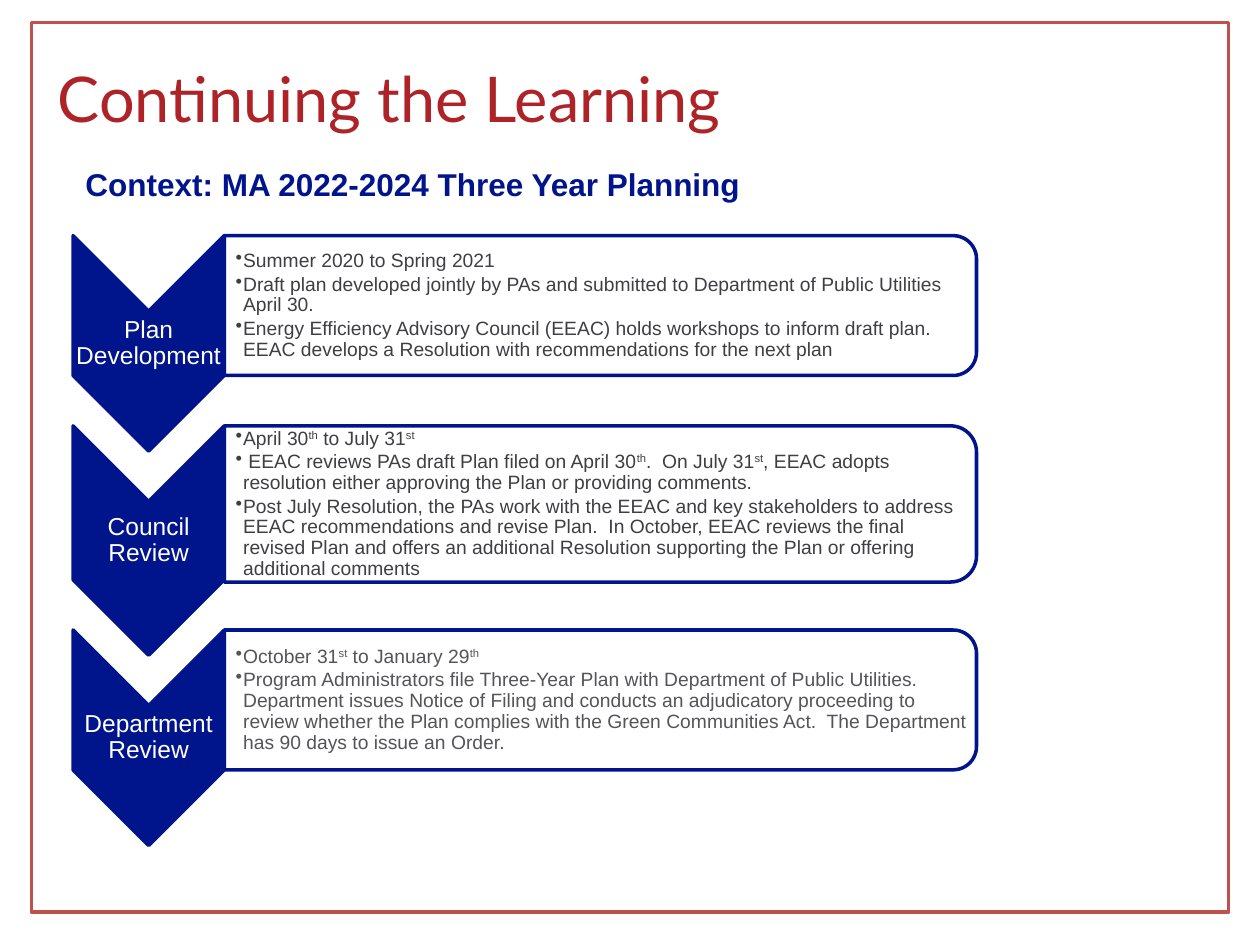
from dataclasses import dataclass

from lxml import etree
from pptx import Presentation
from pptx import util as u
from pptx.dml.color import RGBColor
from pptx.enum import shapes, text
from pptx.oxml import ns

Inches, Pt = u.Inches, u.Pt

NAVY = RGBColor(0x00, 0x14, 0x8C)
BRICK = RGBColor(0xC0, 0x50, 0x4D)
CRIMSON = RGBColor(0xAD, 0x23, 0x27)
WHITE = RGBColor(0xFF, 0xFF, 0xFF)
CHARCOAL = RGBColor(0x3F, 0x3F, 0x43)
GRAY = RGBColor(0x54, 0x54, 0x59)

ARROW_LEFT, ARROW_WIDTH = 0.58, 1.2
PANEL_LEFT, PANEL_WIDTH = 1.78, 5.97
PANEL_INSET = 0.055


@dataclass
class Stage:
    name: str
    top: float
    arrow_height: float
    panel_height: float
    color: RGBColor
    points: list[str]  # ^ marks the start and end of a superscript


STAGES = [
    Stage("Plan Development", 1.87, 1.71, 1.11, CHARCOAL, [
        "Summer 2020 to Spring 2021",
        "Draft plan developed jointly by PAs and submitted to Department of "
        "Public Utilities April 30.",
        "Energy Efficiency Advisory Council (EEAC) holds workshops to inform "
        "draft plan.  EEAC develops a Resolution with recommendations for the "
        "next plan",
    ]),
    Stage("Council Review", 3.38, 1.82, 1.24, CHARCOAL, [
        "April 30^th^ to July 31^st^",
        " EEAC reviews PAs draft Plan filed on April 30^th^.  On July 31^st^, "
        "EEAC adopts resolution either approving the Plan or providing comments.",
        "Post July Resolution, the PAs work with the EEAC and key stakeholders "
        "to address EEAC recommendations and revise Plan.  In October, EEAC "
        "reviews the final revised Plan and offers an additional Resolution "
        "supporting the Plan or offering additional comments",
    ]),
    Stage("Department Review", 5.0, 1.71, 1.11, GRAY, [
        "October 31^st^ to January 29^th^",
        "Program Administrators file Three-Year Plan with Department of Public "
        "Utilities.  Department issues Notice of Filing and conducts an "
        "adjudicatory proceeding to review whether the Plan complies with the "
        "Green Communities Act.  The Department has 90 days to issue an Order.",
    ]),
]


def apply_format(target, values: dict) -> None:
    for name, value in values.items():
        setattr(target, name, value)


def add_outline(slide, kind, left: float, top: float, width: float,
                height: float, fill: RGBColor, line: RGBColor):
    shape = slide.shapes.add_shape(
        kind, Inches(left), Inches(top), Inches(width), Inches(height))
    shape.shadow.inherit = False
    shape.fill.solid()
    shape.fill.fore_color.rgb = fill
    shape.line.color.rgb = line
    shape.line.width = Pt(2)
    return shape


def add_turned(slide, kind, left: float, top: float, width: float,
               height: float, fill: RGBColor):
    """Place a shape turned 90 degrees so that it covers the given area."""
    shift = (width - height) / 2
    shape = add_outline(slide, kind, left + shift, top - shift, height, width,
                        fill, NAVY)
    shape.rotation = 90
    return shape


def add_frame(slide, left: float, top: float, width: float, height: float,
              **values):
    box = slide.shapes.add_textbox(
        Inches(left), Inches(top), Inches(width), Inches(height))
    apply_format(box.text_frame, {"word_wrap": True, **values})
    return box.text_frame


def add_run(paragraph, words: str, size: int, color: RGBColor,
            face: str = "Arial", bold: bool = False):
    run = paragraph.add_run()
    run.text = words
    apply_format(run.font, {"size": Pt(size), "name": face, "bold": bold})
    run.font.color.rgb = color
    return run


def add_bullet(paragraph, color: RGBColor) -> None:
    props = paragraph._p.get_or_add_pPr()
    props.set("marL", str(Inches(0.06)))
    props.set("indent", str(Inches(-0.08)))
    tint = etree.SubElement(props, ns.qn("a:buClr"))
    etree.SubElement(tint, ns.qn("a:srgbClr"), val=str(color))
    etree.SubElement(props, ns.qn("a:buChar"), char="•")


def add_stage(slide, stage: Stage) -> None:
    tight = {
        "vertical_anchor": text.MSO_ANCHOR.MIDDLE,
        **{f"margin_{side}": Inches(0.01)
           for side in ("left", "top", "right", "bottom")},
    }

    # Arrow and its name
    arrow = add_turned(slide, shapes.MSO_SHAPE.CHEVRON, ARROW_LEFT, stage.top,
                       ARROW_WIDTH, stage.arrow_height, NAVY)
    arrow.adjustments[0] = 0.5
    notch = ARROW_WIDTH / 2
    label = add_frame(slide, ARROW_LEFT, stage.top + notch, ARROW_WIDTH,
                      stage.arrow_height - 2 * notch, **tight).paragraphs[0]
    apply_format(label, {"alignment": text.PP_ALIGN.CENTER, "line_spacing": 0.9})
    add_run(label, stage.name, 14, WHITE)

    # Panel, slightly see-through
    panel = add_turned(slide, shapes.MSO_SHAPE.ROUND_2_SAME_RECTANGLE,
                       PANEL_LEFT, stage.top, PANEL_WIDTH, stage.panel_height,
                       WHITE)
    panel.adjustments[0] = 0.167
    panel.adjustments[1] = 0
    white = panel._element.spPr.find(ns.qn("a:solidFill"))[0]
    etree.SubElement(white, ns.qn("a:alpha"), val="90000")

    # Bullet points
    frame = add_frame(slide, PANEL_LEFT, stage.top + PANEL_INSET,
                      PANEL_WIDTH - PANEL_INSET,
                      stage.panel_height - 2 * PANEL_INSET,
                      **{**tight, "margin_left": Inches(0.09)})
    for index, point in enumerate(stage.points):
        paragraph = frame.add_paragraph() if index else frame.paragraphs[0]
        add_bullet(paragraph, stage.color)
        apply_format(paragraph, {"level": 1, "line_spacing": 0.9})
        if index:
            paragraph.space_before = Pt(1.6)
        for part, words in enumerate(point.split("^")):
            if words:
                run = add_run(paragraph, words, 11, stage.color)
                if part % 2:
                    run._r.get_or_add_rPr().set("baseline", "30000")


def main() -> None:
    deck = Presentation()
    deck.slide_width, deck.slide_height = Inches(10), Inches(7.5)
    slide = deck.slides.add_slide(deck.slide_layouts[6])

    # Border and headings
    add_outline(slide, shapes.MSO_SHAPE.RECTANGLE, 0.25, 0.18, 9.5, 7.06,
                WHITE, BRICK)
    title = add_frame(slide, 0.36, 0.42, 5.83, 0.71)
    add_run(title.paragraphs[0], "Continuing the Learning", 36, CRIMSON, "Lato")
    context = add_frame(slide, 0.58, 1.26, 5.85, 0.79)
    add_run(context.paragraphs[0], "Context: MA 2022-2024 Three Year Planning",
            18, NAVY, bold=True)

    # Planning stages
    for stage in STAGES:
        add_stage(slide, stage)

    deck.save("out.pptx")


if __name__ == "__main__":
    main()
